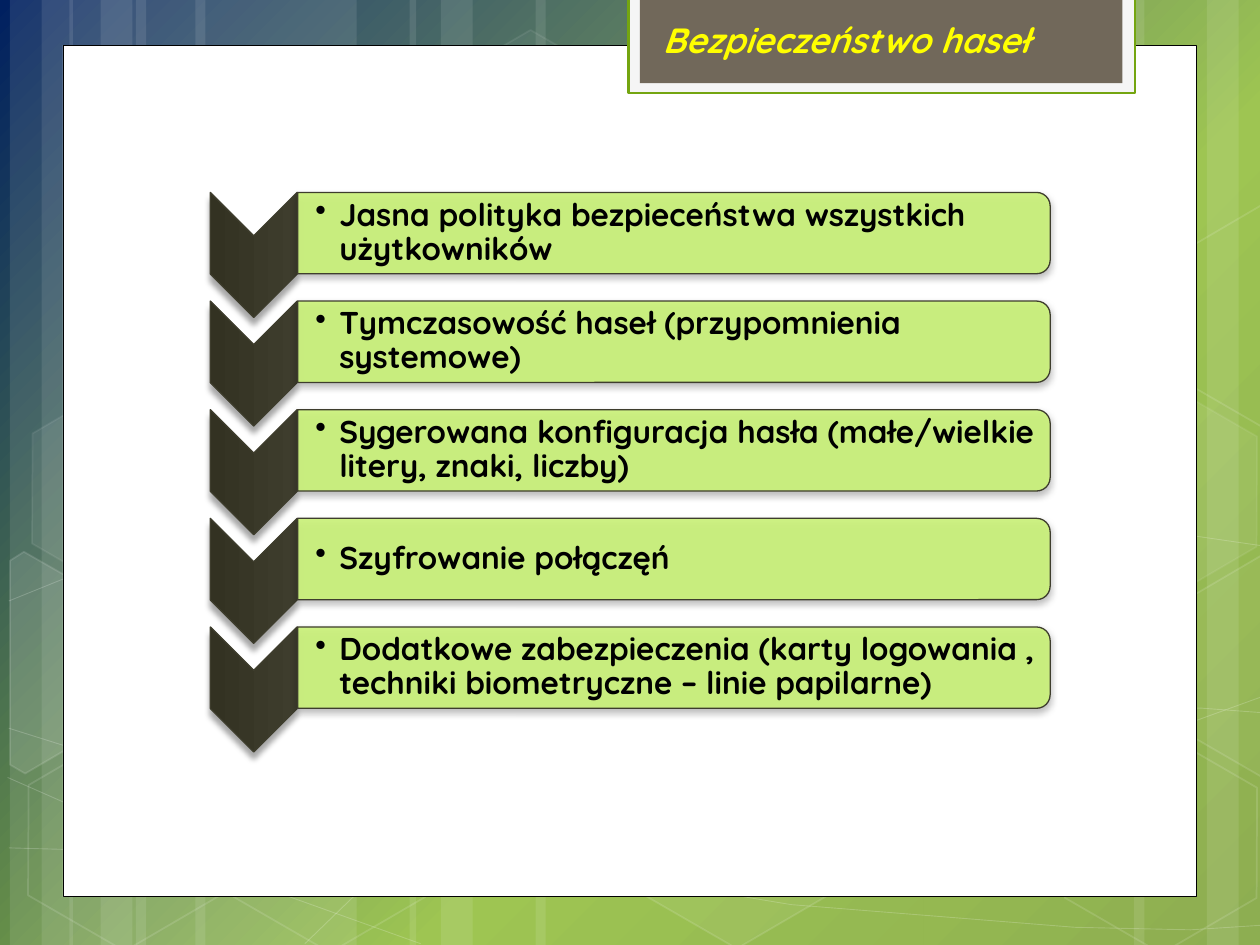
from lxml import etree
from pptx import Presentation
from pptx.dml.color import RGBColor
from pptx.enum.shapes import MSO_SHAPE
from pptx.enum.text import MSO_ANCHOR
from pptx.oxml.ns import qn
from pptx.util import Cm, Pt

RECT = MSO_SHAPE.RECTANGLE
HEXAGON = MSO_SHAPE.HEXAGON
CHEVRON = MSO_SHAPE.CHEVRON
BAR = MSO_SHAPE.ROUND_2_SAME_RECTANGLE
MIDDLE = MSO_ANCHOR.MIDDLE

WHITE = RGBColor(0xFF, 0xFF, 0xFF)
BLACK = RGBColor(0, 0, 0)
NAVY = RGBColor(0x00, 0x20, 0x60)
GREEN = RGBColor(0x93, 0xBF, 0x3F)
MOSS = RGBColor(0x81, 0xA5, 0x3E)
LEAF = RGBColor(0x74, 0xA5, 0x10)
LIME = RGBColor(0xCA, 0xF2, 0x78)
PALE = RGBColor(0xF5, 0xF5, 0xF5)
TAUPE = RGBColor(0x71, 0x68, 0x5A)
YELLOW = RGBColor(0xFF, 0xFF, 0x00)
OLIVE = RGBColor(0x3E, 0x3D, 0x2D)
DARK_OLIVE = RGBColor(0x33, 0x32, 0x22)
FONT = "Quicksand"

GRID = Cm(2.54)
PITCH = 2.19
BAR_LEFT, BAR_TOP, BAR_WIDTH, BAR_HEIGHT = 6, 3.88, 15.17, 1.64

BANDS = [(2.74, 4.45), (0.2, 1.27), (0.84, 2.11), (3.94, 4.45), (1.4, 1.27), (2.03, 2.11),
         (18.62, 4.45), (24.33, 1.27), (22.86, 2.11), (10.8, 7.82), (8.26, 1.27), (8.89, 2.11)]
CURVES = [
    [(0.07, 6.73), (1.9, 6.78), (4.58, 6.65), (7.92, 6.17), (9.05, 5.88), (10.07, 5.51)],
    [(0.07, 4.77), (1.21, 4.31), (3.47, 3.87), (6.54, 3.87), (8.49, 4.11), (10.07, 4.34)],
    [(0.06, 6.17), (1.83, 6.95), (3.34, 7.49)],
    [(0.07, 5.78), (1.28, 6.16), (3.57, 6.73), (6.28, 7.18), (8.53, 7.36), (9.45, 7.38),
     (10.07, 7.34)],
    [(2.42, 7.49), (3.02, 6.91), (3.88, 6.39), (4.7, 6.09), (6.08, 5.78), (6.8, 5.69),
     (7.94, 5.62), (9.53, 5.62), (10.06, 5.66)],
]
HEXAGONS = [(8.48, 0.91, 4, 8), (12.62, 14.96, 6, 12), (0.28, 15.01, 0, 12), (0.36, 7.92, 7, 8),
            (4.42, 15.04, 0, 12), (19.13, 11.51, 10, 12), (21.18, 15.06, 0, 12), (21.18, 7.98, 7, 8)]
CUT_HEXAGONS = [
    (10, [(0.08, 4.45), (0.19, 4.38), (0.96, 4.82), (0.95, 5.7), (0.2, 6.14), (0.08, 6.07)]),
    (4, [(9.26, 4.85), (10.01, 4.41), (10.09, 4.46), (10.09, 6.13), (10.02, 6.17), (9.26, 5.73)]),
    (0, [(9.26, 2.07), (10.01, 1.63), (10.1, 1.68), (10.09, 3.35), (10.02, 3.39), (9.26, 2.95)]),
]
RULES = [
    "Jasna polityka bezpieceństwa wszystkich użytkowników",
    "Tymczasowość haseł (przypomnienia systemowe)",
    "Sygerowana konfiguracja hasła (małe/wielkie litery, znaki, liczby)",
    "Szyfrowanie połączęń",
    "Dodatkowe zabezpieczenia (karty logowania , techniki biometryczne – linie papilarne)",
]


def add_node(parent, tag, **attrs):
    return etree.SubElement(parent, qn(tag), {k: str(v) for k, v in attrs.items()})


def set_alpha(sp, where, percent):
    color = sp.element.xpath(f"./p:spPr/{where}a:solidFill/a:srgbClr")[0]
    add_node(color, "a:alpha", val=percent * 1000)


def set_gradient(fill, element, stops, angle):
    fill.gradient()
    fill.gradient_angle = -angle % 360
    stop_list = element.xpath(".//a:gradFill/a:gsLst")[0]
    for stop in list(stop_list):
        stop_list.remove(stop)
    for position, color in stops:
        stop = add_node(stop_list, "a:gs", pos=position * 1000)
        add_node(stop, "a:srgbClr", val=color)


def style(sp, fill=None, fill_alpha=100, line=None, weight=1, line_alpha=100):
    sp.shadow.inherit = False
    if fill is None or fill_alpha == 0:
        sp.fill.background()
    else:
        sp.fill.solid()
        sp.fill.fore_color.rgb = fill
        set_alpha(sp, "", fill_alpha)
    if line is None:
        sp.line.fill.background()
    else:
        sp.line.color.rgb = line
        sp.line.width = Pt(weight)
        set_alpha(sp, "a:ln/", line_alpha)


def add_box(s, kind, left, top, width, height, **look):
    sp = s.shapes.add_shape(kind, Cm(left), Cm(top), Cm(width), Cm(height))
    style(sp, **look)
    return sp


def add_turned(s, kind, left, top, width, height, **look):
    shift = (width - height) / 2
    sp = add_box(s, kind, left + shift, top - shift, height, width, **look)
    sp.rotation = 90
    return sp


def add_outline(s, points, close, **look):
    scaled = [(round(x * GRID), round(y * GRID)) for x, y in points]
    builder = s.shapes.build_freeform(*scaled[0])
    builder.add_line_segments(scaled[1:], close=close)
    style(builder.convert_to_shape(), **look)


def add_drop_shadow(sp, percent, blur, distance):
    effects = sp.element.spPr.find(qn("a:effectLst"))
    shadow = add_node(effects, "a:outerShdw", blurRad=Pt(blur), dist=Pt(distance),
                      dir=5400000, rotWithShape=0)
    color = add_node(shadow, "a:srgbClr", val=BLACK)
    add_node(color, "a:alpha", val=percent * 1000)


def add_text(s, text, left, top, width, height, size, color):
    sp = s.shapes.add_textbox(Cm(left), Cm(top), Cm(width), Cm(height))
    tf = sp.text_frame
    tf.word_wrap = True
    tf.text = text
    font = tf.paragraphs[0].runs[0].font
    font.name, font.size, font.bold = FONT, Pt(size), True
    font.color.rgb = color
    return tf


def add_rule(s, text, top):
    chevron = add_turned(s, CHEVRON, 4.24, top, 1.75, 2.52, line=OLIVE, weight=0.75)
    set_gradient(chevron.fill, chevron.element, [(0, OLIVE), (100, DARK_OLIVE)], 90)
    add_drop_shadow(chevron, 34, 3.5, 4)
    bar = add_turned(s, BAR, BAR_LEFT, top, BAR_WIDTH, BAR_HEIGHT,
                     fill=LIME, fill_alpha=90, line=OLIVE, weight=0.75)
    add_drop_shadow(bar, 28, 4, 2)
    tf = add_text(s, text, BAR_LEFT, top + 0.08, BAR_WIDTH - 0.08, BAR_HEIGHT - 0.16, 18, BLACK)
    tf.vertical_anchor = MIDDLE
    tf.margin_left = Cm(0.36)
    tf.margin_top = tf.margin_right = tf.margin_bottom = Cm(0.03)
    p = tf.paragraphs[0]
    p.line_spacing = 0.9
    p.space_after = Pt(2.7)
    pPr = p._p.get_or_add_pPr()
    pPr.set("marL", str(Cm(0.48)))
    pPr.set("indent", str(-Cm(0.48)))
    add_node(pPr, "a:buChar", char="•")


def add_backdrop(s):
    set_gradient(s.background.fill, s.element, [(0, NAVY), (62, GREEN), (100, MOSS)], 45)
    for left, width in BANDS:
        add_box(s, RECT, left, 0, width, 19.05, fill=WHITE, fill_alpha=10)
    for points in CURVES:
        add_outline(s, points, False, line=WHITE, weight=0.5, line_alpha=20)
    for left, top, fill_alpha, line_alpha in HEXAGONS:
        sp = add_box(s, HEXAGON, left, top, 4.45, 3.86, fill=WHITE,
                     fill_alpha=fill_alpha, line=WHITE, line_alpha=line_alpha)
        sp.adjustments[0] = 0.285
        sp.rotation = 30
    for fill_alpha, points in CUT_HEXAGONS:
        add_outline(s, points, True, fill=WHITE, fill_alpha=fill_alpha, line=WHITE, line_alpha=12)


def main():
    prs = Presentation()
    prs.slide_width, prs.slide_height = Cm(25.4), Cm(19.05)
    s = prs.slides.add_slide(prs.slide_layouts[6])
    add_backdrop(s)
    add_box(s, RECT, 1.27, 0.91, 22.86, 17.17, fill=WHITE, line=BLACK, weight=0.5)
    add_box(s, RECT, 12.67, -0.05, 10.21, 1.93, fill=PALE, line=LEAF, weight=1.25)
    add_box(s, RECT, 12.9, -0.05, 9.73, 1.73, fill=TAUPE)
    title = add_text(s, "Bezpieczeństwo haseł", 13.11, 0.25, 8.76, 1.12, 20, YELLOW)
    title.paragraphs[0].runs[0].font.italic = True
    for i, text in enumerate(RULES):
        add_rule(s, text, BAR_TOP + i * PITCH)
    prs.save("out.pptx")


if __name__ == "__main__":
    main()
